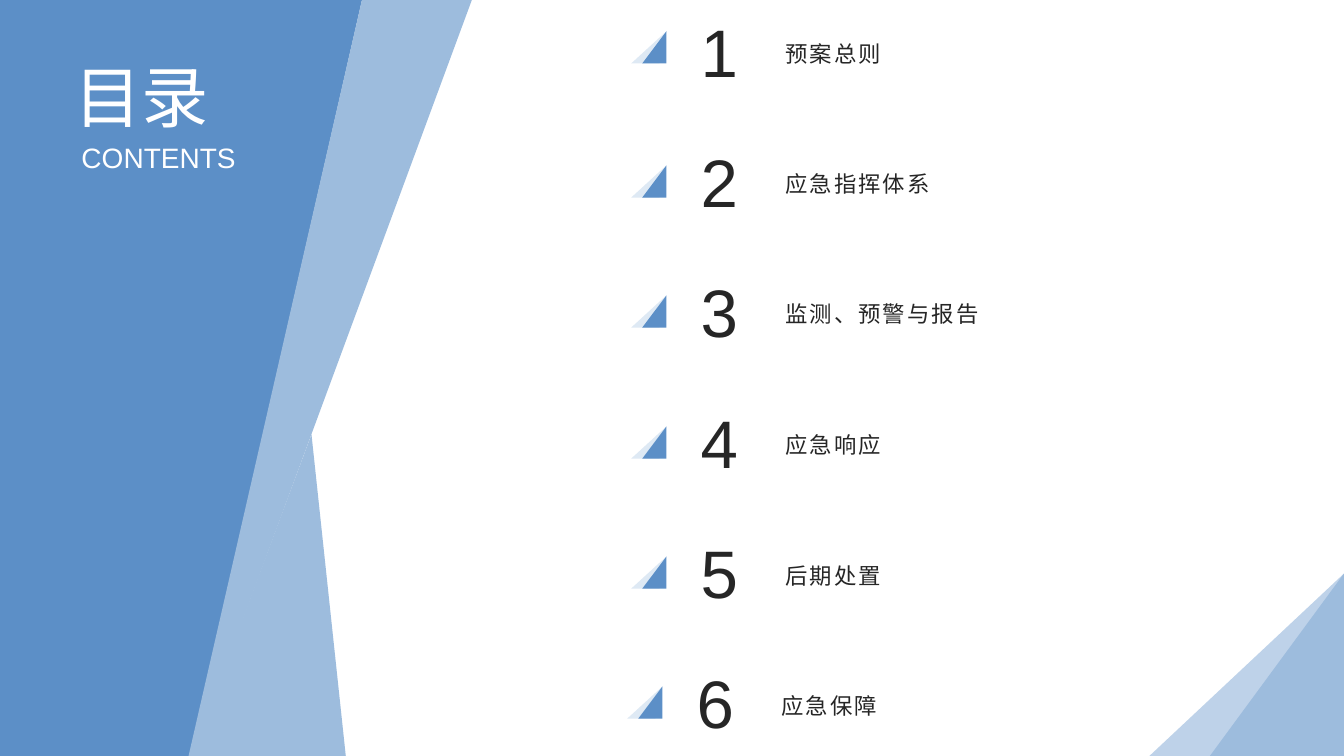
from dataclasses import dataclass

from pptx import Presentation
from pptx.dml.color import RGBColor
from pptx.enum.shapes import MSO_SHAPE as Shape
from pptx.enum.text import MSO_ANCHOR as Anchor, MSO_AUTO_SIZE as AutoSize, PP_ALIGN as Align
from pptx.util import Pt

PX = 9144  # EMU per px, 100 px to the inch
WIDTH, HEIGHT = 1333, 750


@dataclass(frozen=True)
class Theme:
    font: str = "Arial"
    blue: str = "5C8FC7"
    mid: str = "9DBCDD"
    light: str = "BED2E9"
    pale: str = "DEE9F4"
    white: str = "FFFFFF"
    ink: str = "262626"
    display: int = 48
    subtitle: int = 20
    label: int = 16


THEME = Theme()

# label, shift of the row to the right, shift of its marker downwards
ENTRIES = [
    ("预案总则", 0, -4),
    ("应急指挥体系", 0, 0),
    ("监测、预警与报告", 0, 0),
    ("应急响应", 0, 0),
    ("后期处置", 0, 0),
    ("应急保障", -4, 0),
]


def emu(*lengths):
    return [round(n * PX) for n in lengths]


def paint(sp, color):
    sp.shadow.inherit = False
    sp.fill.solid()
    sp.fill.fore_color.rgb = RGBColor.from_string(color)
    sp.line.fill.background()


def polygon(s, points, color):
    builder = s.shapes.build_freeform(*points[0], scale=PX)
    builder.add_line_segments(points[1:], close=True)
    paint(builder.convert_to_shape(), color)


def write(sp, text, *, size, color, anchor=Anchor.TOP, wrap=False, spacing=0):
    tf = sp.text_frame
    tf.auto_size = AutoSize.NONE
    tf.word_wrap = wrap
    tf.vertical_anchor = anchor
    p = tf.paragraphs[0]
    p.alignment = Align.LEFT
    r = p.add_run()
    r.text = text
    r.font.name = THEME.font
    r.font.size = Pt(size)
    r.font.color.rgb = RGBColor.from_string(color)
    if spacing:
        r.font._element.set("spc", str(round(spacing * 100)))


def add_text(s, box, text, **fmt):
    write(s.shapes.add_textbox(*emu(*box)), text, **fmt)


def folded_triangle(s, box, back, front):
    """Draw a slanted triangle with a right-angled one over its right part."""
    x, y, w, h = box
    bottom = y + h
    polygon(s, [(x + w, y), (x + round(0.8 * w), bottom), (x, bottom)], back)
    inset = round(0.31 * w)
    sp = s.shapes.add_shape(Shape.ISOSCELES_TRIANGLE, *emu(x + inset, y, w - inset, h))
    sp.adjustments[0] = 1
    paint(sp, front)


def side_panel(s, box):
    x, y, w, h = box
    bottom = y + h
    polygon(s, [(x, y), (x + 359, y), (x + 188, bottom), (x, bottom)], THEME.blue)
    polygon(s, [(x + w, y), (x + 191, bottom), (x + 187, bottom), (x + 359, y)], THEME.mid)
    polygon(s, [(x + 309, y + 431), (x + 343, bottom), (x + 190, bottom)], THEME.mid)

    title = s.shapes.title
    title.left, title.top, title.width, title.height = emu(x + 64, y + 50, 220, 91)
    write(title, "目录", size=THEME.display, color=THEME.white, wrap=True)
    title.element.getparent().append(title.element)  # in front of the panel
    add_text(s, (x + 71, y + 134, 175, 44), "CONTENTS",
             size=THEME.subtitle, color=THEME.white)


def contents_row(s, box, number, label, marker_shift):
    x, y, w, h = box
    folded_triangle(s, (x, y + 30 + marker_shift, 35, 32), THEME.pale, THEME.blue)
    add_text(s, (x + 59, y, 58, h), str(number), size=THEME.display,
             color=THEME.ink, wrap=True)
    add_text(s, (x + 143, y + 3, w - 143, h), label, size=THEME.label,
             color=THEME.ink, anchor=Anchor.MIDDLE, wrap=True, spacing=1.5)


def contents_list(s, box):
    x, y, w, h = box
    row_h = 91
    pitch = (h - row_h) / (len(ENTRIES) - 1)
    for i, (label, shift, marker_shift) in enumerate(ENTRIES):
        row = (x + shift, y + round(i * pitch), w, row_h)
        contents_row(s, row, i + 1, label, marker_shift)


def contents_slide(prs):
    s = prs.slides.add_slide(prs.slide_layouts[5])
    folded_triangle(s, (1140, 569, 193, 181), THEME.light, THEME.mid)
    side_panel(s, (0, 0, 468, HEIGHT))
    contents_list(s, (626, 5, 458, 737))


def main():
    prs = Presentation()
    prs.slide_width, prs.slide_height = emu(WIDTH, HEIGHT)
    contents_slide(prs)
    prs.save("out.pptx")


if __name__ == "__main__":
    main()
